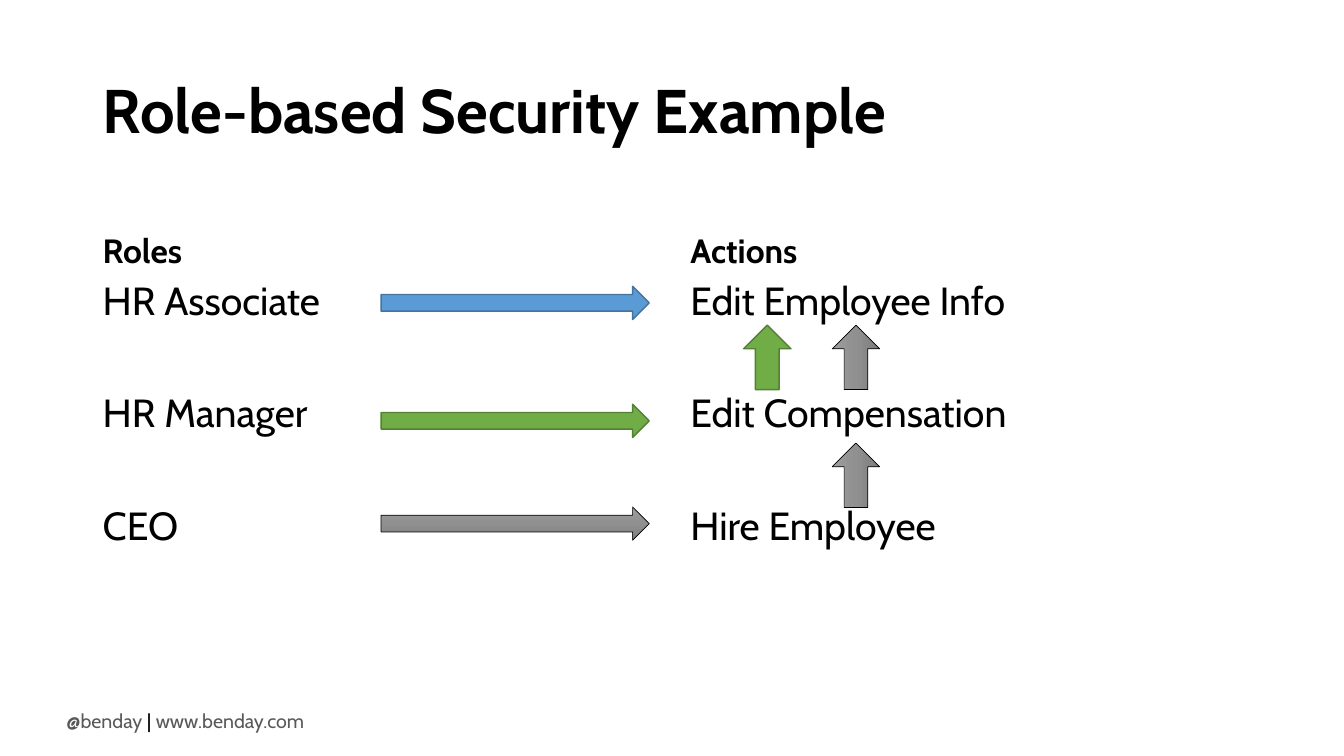
import copy
import dataclasses

import pptx
import pptx.dml.color
import pptx.enum.shapes
import pptx.enum.text
import pptx.oxml.ns
import pptx.util

Inches = pptx.util.Inches
Pt = pptx.util.Pt
Anchor = pptx.enum.text.MSO_ANCHOR


@dataclasses.dataclass(frozen=True)
class Theme:
    font: str = "Cabin"
    ink: str = "000000"
    muted: str = "595959"
    title: int = 44
    head: int = 24
    body: int = 28
    foot: int = 14
    blue: tuple = ("5B9BD5",)
    green: tuple = ("70AD47",)
    gray: tuple = ("9D9D9D", "909090", "7C7C7C")
    edges: tuple = (("43739E", 1), ("538035", 1), ("000000", 0.5))


THEME = Theme()


def color(code):
    return pptx.dml.color.RGBColor.from_string(code)


def add_text(slide, rows, box, size, bold=False, anchor=Anchor.TOP,
             wrap=True, gap=0, lead=0.9):
    shape = slide.shapes.add_textbox(*map(Inches, box))
    frame = shape.text_frame
    frame.word_wrap = wrap
    frame.vertical_anchor = anchor
    if not wrap:
        frame.auto_size = pptx.enum.text.MSO_AUTO_SIZE.SHAPE_TO_FIT_TEXT
    for index, row in enumerate(rows):
        para = frame.add_paragraph() if index else frame.paragraphs[0]
        para.line_spacing = lead
        para.space_before = Pt(gap if index else 0)
        for text, tone in row:
            run = para.add_run()
            run.text = text
            run.font.name = THEME.font
            run.font.size = Pt(size)
            run.font.bold = bold
            run.font.color.rgb = color(tone)


def paint(shape, tones):
    fill = shape.fill
    if len(tones) == 1:
        fill.solid()
        fill.fore_color.rgb = color(tones[0])
        return
    fill.gradient()
    fill.gradient_angle = 270
    stops = next(shape._element.iter(pptx.oxml.ns.qn("a:gsLst")))
    while len(stops) < len(tones):
        stops.append(copy.deepcopy(stops[0]))
    for index, (stop, tone) in enumerate(zip(fill.gradient_stops, tones)):
        stop.position = index / (len(tones) - 1)
        stop.color.rgb = color(tone)


def add_arrow(slide, box, tones, edge, turn=0):
    kind = pptx.enum.shapes.MSO_SHAPE.RIGHT_ARROW
    shape = slide.shapes.add_shape(kind, *map(Inches, box))
    shape.shadow.inherit = False
    shape.rotation = turn
    paint(shape, tones)
    tone, width = edge
    shape.line.color.rgb = color(tone)
    shape.line.width = Pt(width)


def add_list(slide, left, width, head, items):
    add_text(slide, [[(head, THEME.ink)]], (left, 1.84, width, 0.9),
             THEME.head, bold=True, anchor=Anchor.BOTTOM)
    add_text(slide, [[(item, THEME.ink)] for item in items],
             (left, 2.74, width, 4.03), THEME.body, gap=50.2)


def main():
    deck = pptx.Presentation()
    deck.slide_width = Inches(13.33)
    deck.slide_height = Inches(7.5)
    slide = deck.slides.add_slide(deck.slide_layouts[6])

    add_text(slide, [[("@benday", THEME.muted), (" | ", THEME.ink),
                      ("www.benday.com", THEME.muted)]],
             (0.56, 6.98, 2.69, 0.34), THEME.foot, wrap=False, lead=1.0)
    add_text(slide, [[("Role-based Security Example", THEME.ink)]],
             (0.92, 0.4, 11.5, 1.45), THEME.title, bold=True,
             anchor=Anchor.MIDDLE)
    add_list(slide, 0.92, 5.64, "Roles",
             ["HR Associate", "HR Manager", "CEO"])
    add_list(slide, 6.75, 5.67, "Actions",
             ["Edit Employee Info", "Edit Compensation", "Hire Employee"])

    blue, green, gray = zip((THEME.blue, THEME.green, THEME.gray),
                            THEME.edges)
    for top, style in ((2.84, blue), (4.01, green), (5.03, gray)):
        add_arrow(slide, (3.78, top, 2.66, 0.33), *style)
    for left, top, style in ((8.17, 4.48, gray), (8.17, 3.31, gray),
                             (7.29, 3.31, green)):
        add_arrow(slide, (left, top, 0.64, 0.47), *style, turn=270)

    deck.save("out.pptx")


if __name__ == "__main__":
    main()
